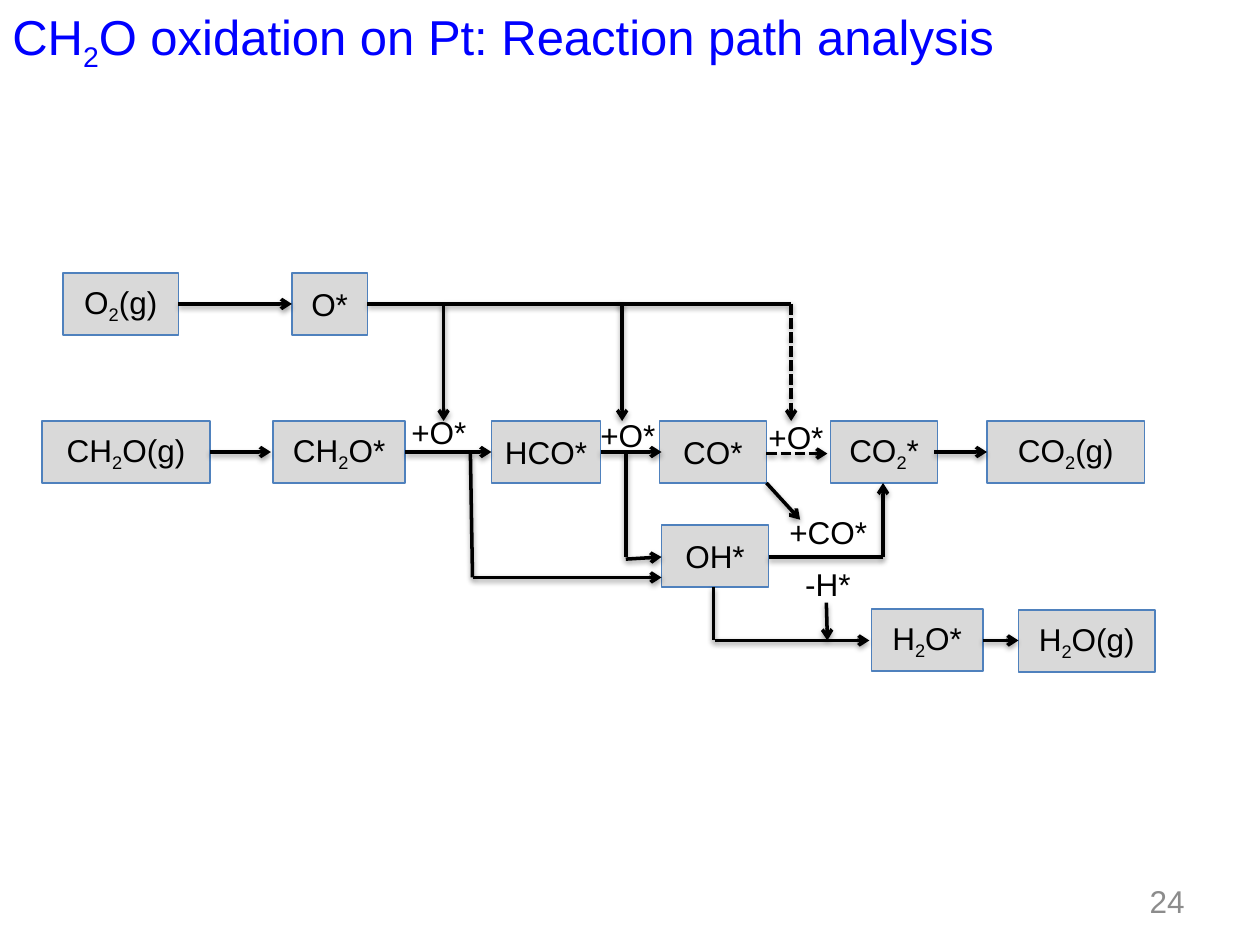
from dataclasses import dataclass

from lxml import etree
from pptx import Presentation
from pptx.dml.color import RGBColor
from pptx.enum.dml import MSO_LINE
from pptx.enum.shapes import MSO_CONNECTOR, MSO_SHAPE
from pptx.enum.text import MSO_ANCHOR, PP_ALIGN
from pptx.oxml.ns import qn
from pptx.util import Inches, Pt

RECT = MSO_SHAPE.RECTANGLE
STRAIGHT = MSO_CONNECTOR.STRAIGHT
DASH = MSO_LINE.SQUARE_DOT
LEFT, CENTER, RIGHT = PP_ALIGN.LEFT, PP_ALIGN.CENTER, PP_ALIGN.RIGHT
TOP, MIDDLE = MSO_ANCHOR.TOP, MSO_ANCHOR.MIDDLE


@dataclass(frozen=True)
class Theme:
    font: str = "Arial"
    title: RGBColor = RGBColor(0x00, 0x00, 0xFF)
    ink: RGBColor = RGBColor(0x00, 0x00, 0x00)
    muted: RGBColor = RGBColor(0x8C, 0x8C, 0x8C)
    box_fill: RGBColor = RGBColor(0xD9, 0xD9, 0xD9)
    box_line: RGBColor = RGBColor(0x4F, 0x81, 0xBD)
    title_size: int = 28
    body_size: int = 18
    box_border: float = 1
    arrow_width: float = 2


THEME = Theme()

# The grid has 120 columns and 90 rows, twelve to the inch.
BOX_H = 5.9
O_TOP, MAIN_TOP, OH_TOP, WATER_TOP = 26, 40.1, 50, 58
O_Y, MAIN_Y, OH_Y, WATER_Y = 28.95, 43.05, 53.05, 61
BRANCH_Y = 55
DROP_1, DROP_2, DROP_3 = 42.25, 59.25, 75.35

# An underscore marks the next character as a subscript.
SPECIES = [  # formula, left, top, width
    ("O_2(g)", 6, O_TOP, 11),
    ("O*", 27.8, O_TOP, 7.2),
    ("CH_2O(g)", 4, MAIN_TOP, 16),
    ("CH_2O*", 26, MAIN_TOP, 12.6),
    ("HCO*", 46.8, MAIN_TOP, 10.4),
    ("CO*", 62.8, MAIN_TOP, 10.2),
    ("CO_2*", 79.1, MAIN_TOP, 10.2),
    ("CO_2(g)", 94, MAIN_TOP, 15),
    ("OH*", 63, OH_TOP, 10.2),
    ("H_2O*", 83, WATER_TOP, 10.6),
    ("H_2O(g)", 97, WATER_TOP + 0.1, 13),
]
REACTANTS = [  # label, left, top, width
    ("+O*", 38, 38.75, 9),
    ("+O*", 56, 39, 8),
    ("+O*", 72, 39.25, 8),
    ("+CO*", 74, 48.25, 12),
    ("-H*", 75.5, 53.25, 8),
]
ARROWS = [  # x1, y1, x2, y2
    (17, O_Y, 27.8, O_Y),
    (DROP_1, O_Y, DROP_1, MAIN_TOP),
    (DROP_2, O_Y, DROP_2, MAIN_TOP),
    (20, MAIN_Y, 25.8, MAIN_Y),
    (38.6, MAIN_Y, 46.8, MAIN_Y),
    (57.2, MAIN_Y, 63, MAIN_Y),
    (89, MAIN_Y, 94, MAIN_Y),
    (59.6, 53.25, 63, OH_Y),
    (84.1, OH_Y, 84.1, MAIN_TOP + BOX_H),
    (73, MAIN_TOP + BOX_H, 76.2, 49.5),
    (68.1, WATER_Y, 82.8, WATER_Y),
    (78.7, 57.4, 78.8, WATER_Y),
    (93.6, WATER_Y, 97, WATER_Y),
    (45, BRANCH_Y, 63, BRANCH_Y),
]
DASHED_ARROWS = [
    (DROP_3, O_Y, DROP_3, MAIN_TOP),
    (73, 43.2, 78.8, 43.2),
]
LINKS = [
    (35, O_Y, DROP_1, O_Y),
    (DROP_1, O_Y, DROP_2, O_Y),
    (58.8, O_Y, DROP_3, O_Y),
    (59.6, MAIN_Y, 59.6, OH_Y),
    (73.2, OH_Y, 84.1, OH_Y),
    (67.95, OH_TOP + BOX_H, 67.95, WATER_Y),
    (44.8, MAIN_Y, 45, BRANCH_Y),
]


def grid(*units):
    return [Inches(u / 12) for u in units]


def write_formula(sp, text, size, color, align, anchor, wrap=True):
    """Write text whose underscores lower the character after them."""
    tf = sp.text_frame
    tf.word_wrap = wrap
    tf.vertical_anchor = anchor
    p = tf.paragraphs[0]
    p.alignment = align
    p.font.name, p.font.size = THEME.font, Pt(size)
    p.font.color.rgb = color
    head, *rest = text.split("_")
    p.add_run().text = head
    for part in rest:
        r = p.add_run()
        r.text = part[0]
        r.font._element.set("baseline", "-25000")
        p.add_run().text = part[1:]


def add_text(slide, text, left, top, width, height=4.8, size=THEME.body_size,
             color=THEME.ink, align=LEFT, anchor=TOP):
    sp = slide.shapes.add_textbox(*grid(left, top, width, height))
    write_formula(sp, text, size, color, align, anchor)


def add_species(slide, formula, left, top, width):
    sp = slide.shapes.add_shape(RECT, *grid(left, top, width, BOX_H))
    sp.shadow.inherit = False
    sp.fill.solid()
    sp.fill.fore_color.rgb = THEME.box_fill
    sp.line.color.rgb = THEME.box_line
    sp.line.width = Pt(THEME.box_border)
    write_formula(sp, formula, THEME.body_size, THEME.ink, CENTER, MIDDLE,
                  wrap=False)


def add_soft_shadow(sp):
    effects = etree.SubElement(sp._element.spPr, qn("a:effectLst"))
    shadow = etree.SubElement(effects, qn("a:outerShdw"), blurRad="40000",
                              dist="20000", dir="5400000", rotWithShape="0")
    color = etree.SubElement(shadow, qn("a:srgbClr"), val=str(THEME.ink))
    etree.SubElement(color, qn("a:alpha"), val="38000")


def add_path(slide, ends, arrow=True, dashed=False):
    sp = slide.shapes.add_connector(STRAIGHT, *grid(*ends))
    sp.line.color.rgb = THEME.ink
    sp.line.width = Pt(THEME.arrow_width)
    if dashed:
        sp.line.dash_style = DASH
    if arrow:
        etree.SubElement(sp.line._get_or_add_ln(), qn("a:tailEnd"), type="arrow")
    add_soft_shadow(sp)


def main():
    prs = Presentation()
    prs.slide_width, prs.slide_height = grid(120, 90)
    slide = prs.slides.add_slide(prs.slide_layouts[6])

    add_text(slide, "CH_2O oxidation on Pt: Reaction path analysis",
             0, 0, 119.25, 6.85, THEME.title_size, THEME.title)
    add_text(slide, "24", 86, 83.4, 28, color=THEME.muted,
             align=RIGHT, anchor=MIDDLE)
    for species in SPECIES:
        add_species(slide, *species)
    for ends in ARROWS:
        add_path(slide, ends)
    for ends in DASHED_ARROWS:
        add_path(slide, ends, dashed=True)
    for ends in LINKS:
        add_path(slide, ends, arrow=False)
    for reactant in REACTANTS:
        add_text(slide, *reactant)
    prs.save("out.pptx")


if __name__ == "__main__":
    main()
